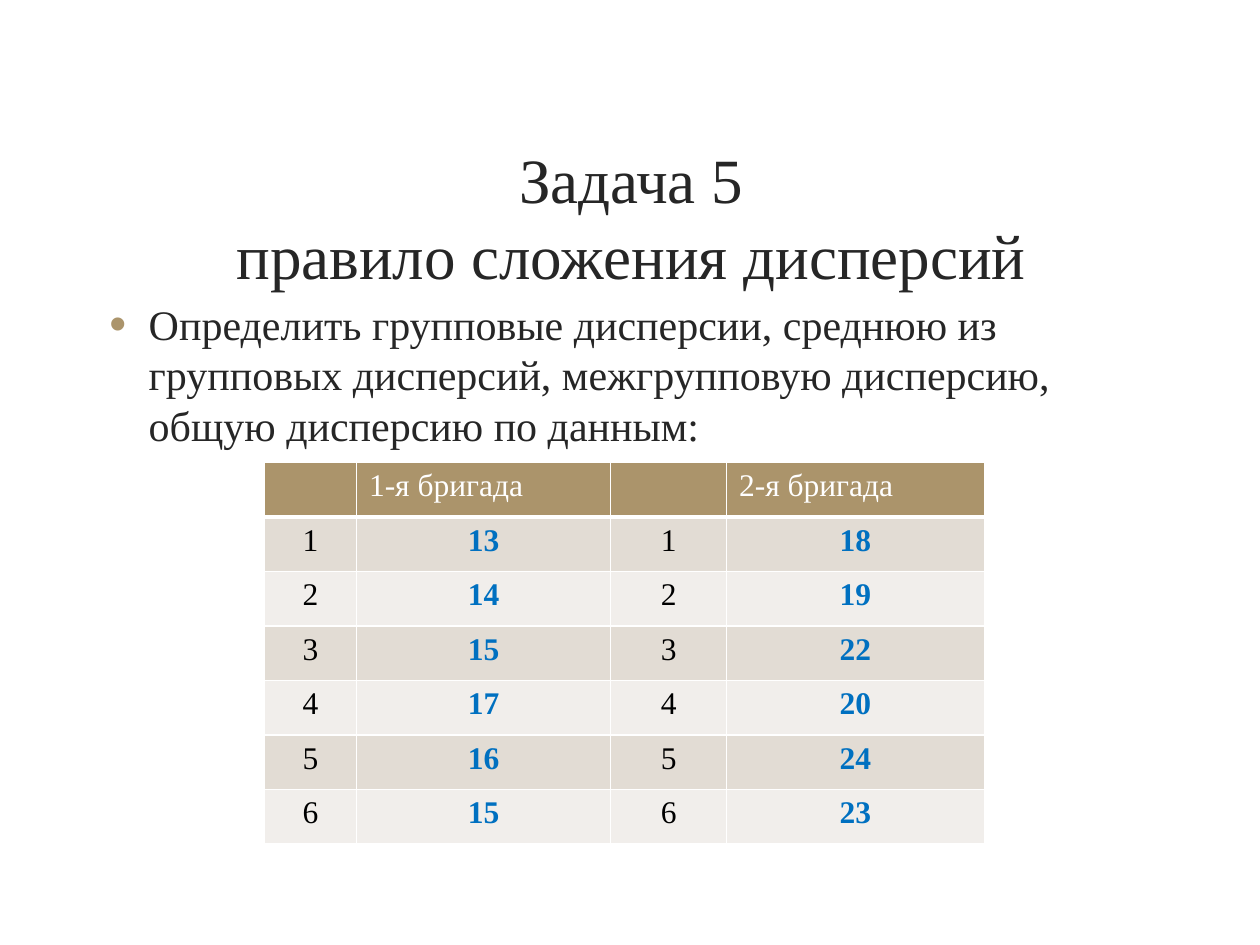
from lxml import etree
from pptx import Presentation
from pptx.dml.color import RGBColor
from pptx.enum.text import MSO_ANCHOR, PP_ALIGN
from pptx.oxml.ns import qn
from pptx.util import Pt

CENTER, LEFT = PP_ALIGN.CENTER, PP_ALIGN.LEFT
MIDDLE, TOP = MSO_ANCHOR.MIDDLE, MSO_ANCHOR.TOP

# Content
TITLE = "Задача 5\vправило сложения дисперсий"
TASK = ("Определить групповые дисперсии, среднюю из групповых дисперсий, "
        "межгрупповую дисперсию, общую дисперсию по данным:")
HEADER = ["", "1-я бригада", "", "2-я бригада"]
BRIGADE_1 = [13, 14, 15, 17, 16, 15]
BRIGADE_2 = [18, 19, 22, 20, 24, 23]

THEME = {
    "font": "Times New Roman",
    "title": 36, "body": 24, "cell": 18,
    "text": "262626", "accent": "AB946B", "white": "FFFFFF",
    "number": "000000", "value": "0070C0", "bands": ("E2DCD4", "F1EEEB"),
}

# Layout, in points
TITLE_BOX = (65.5, 72, 590.4, 103)
TASK_BOX = (55.4, 167, 617.8, 300.2)
TABLE_LEFT, TABLE_TOP = 151.2, 264.3
COL_WIDTHS = [52.5, 145.3, 66.2, 147.3]
ROW_HEIGHT = 31.15
INDENT = 22.5


def style(p, size, color, align=LEFT, bold=False):
    p.alignment = align
    for r in p.runs:
        r.font.name = THEME["font"]
        r.font.size = Pt(size)
        r.font.bold = bold
        r.font.color.rgb = RGBColor.from_string(color)


def add_text(s, box, text, size, align, anchor):
    tf = s.shapes.add_textbox(*map(Pt, box)).text_frame
    tf.word_wrap = True
    tf.vertical_anchor = anchor
    p = tf.paragraphs[0]
    p.text = text
    style(p, size, THEME["text"], align)
    return p


def add_bullet(p):
    p.space_before, p.space_after = Pt(4.8), Pt(6)
    pPr = p._p.get_or_add_pPr()
    pPr.set("marL", str(Pt(INDENT)))
    pPr.set("indent", str(-Pt(INDENT)))
    color = etree.SubElement(pPr, qn("a:buClr"))
    etree.SubElement(color, qn("a:srgbClr"), val=THEME["accent"])
    etree.SubElement(pPr, qn("a:buSzPct"), val="115000")
    etree.SubElement(pPr, qn("a:buFont"), typeface="Arial")
    etree.SubElement(pPr, qn("a:buChar"), char="•")


def set_borders(cell, widths):
    tcPr = cell._tc.get_or_add_tcPr()
    for i, (side, width) in enumerate(widths.items()):
        ln = etree.Element(qn("a:ln" + side), w=str(Pt(width)))
        fill = etree.SubElement(ln, qn("a:solidFill"))
        etree.SubElement(fill, qn("a:srgbClr"), val=THEME["white"])
        tcPr.insert(i, ln)


def add_brigade_table(s):
    rows = [HEADER] + [[n, a, n, b] for n, (a, b)
                       in enumerate(zip(BRIGADE_1, BRIGADE_2), 1)]
    table = s.shapes.add_table(
        len(rows), len(HEADER), Pt(TABLE_LEFT), Pt(TABLE_TOP),
        Pt(sum(COL_WIDTHS)), Pt(ROW_HEIGHT * len(rows))).table
    for column, width in zip(table.columns, COL_WIDTHS):
        column.width = Pt(width)
    for i, row in enumerate(rows):
        table.rows[i].height = Pt(ROW_HEIGHT)
        for j, content in enumerate(row):
            cell = table.cell(i, j)
            is_header, is_value = i == 0, j % 2 == 1
            fill = THEME["accent"] if is_header else THEME["bands"][(i - 1) % 2]
            cell.fill.solid()
            cell.fill.fore_color.rgb = RGBColor.from_string(fill)
            set_borders(cell, {"L": 1, "R": 1, "T": 3 if i == 1 else 1,
                               "B": 3 if is_header else 1})
            cell.text_frame.text = str(content)
            p = cell.text_frame.paragraphs[0]
            if is_header:
                style(p, THEME["cell"], THEME["white"])
            else:
                color = THEME["value" if is_value else "number"]
                style(p, THEME["cell"], color, CENTER, is_value)


def main():
    prs = Presentation()
    prs.slide_width, prs.slide_height = Pt(720), Pt(540)
    s = prs.slides.add_slide(prs.slide_layouts[6])

    # Title, task and data
    add_text(s, TITLE_BOX, TITLE, THEME["title"], CENTER, MIDDLE)
    add_bullet(add_text(s, TASK_BOX, TASK, THEME["body"], LEFT, TOP))
    add_brigade_table(s)

    prs.save("out.pptx")


if __name__ == "__main__":
    main()
